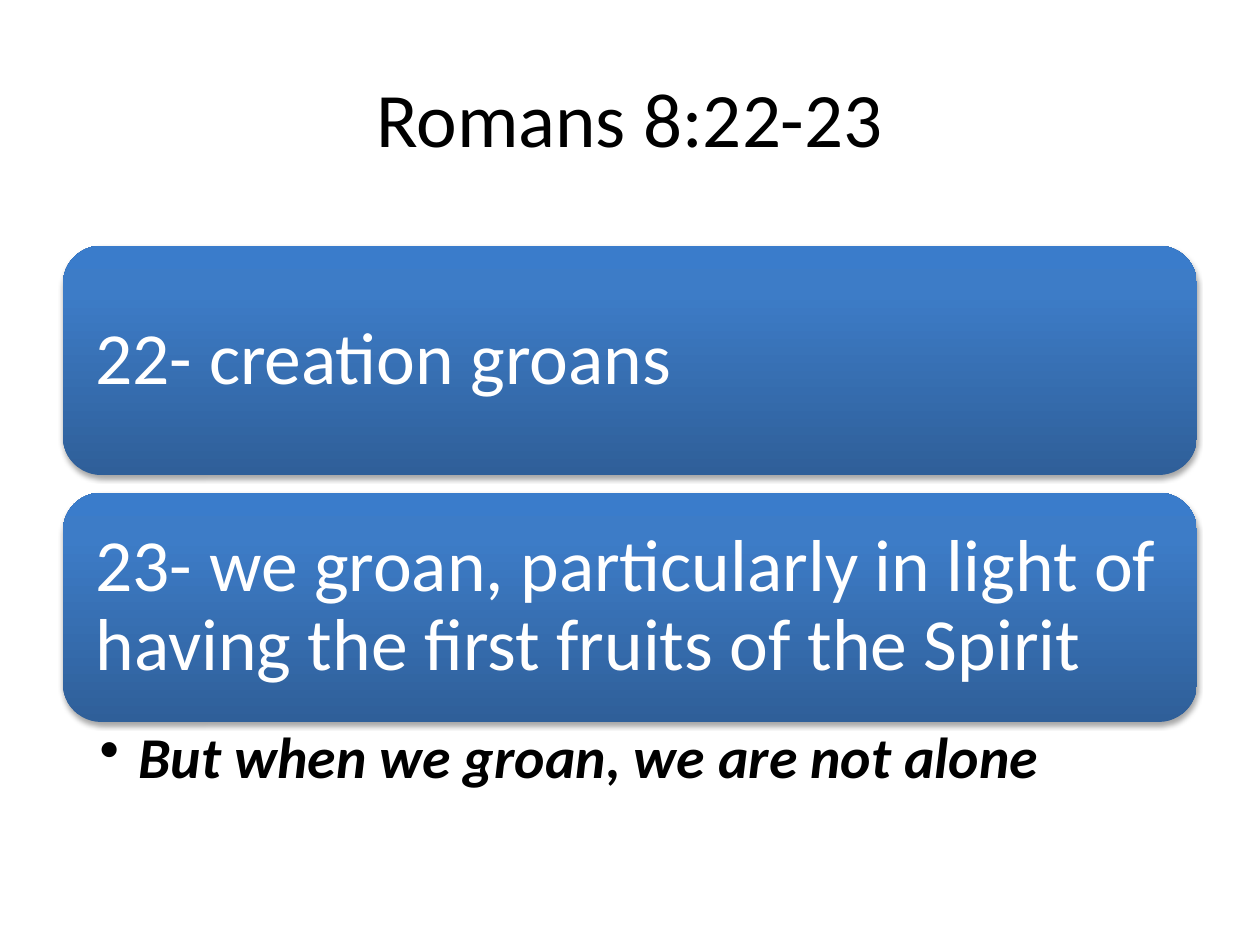
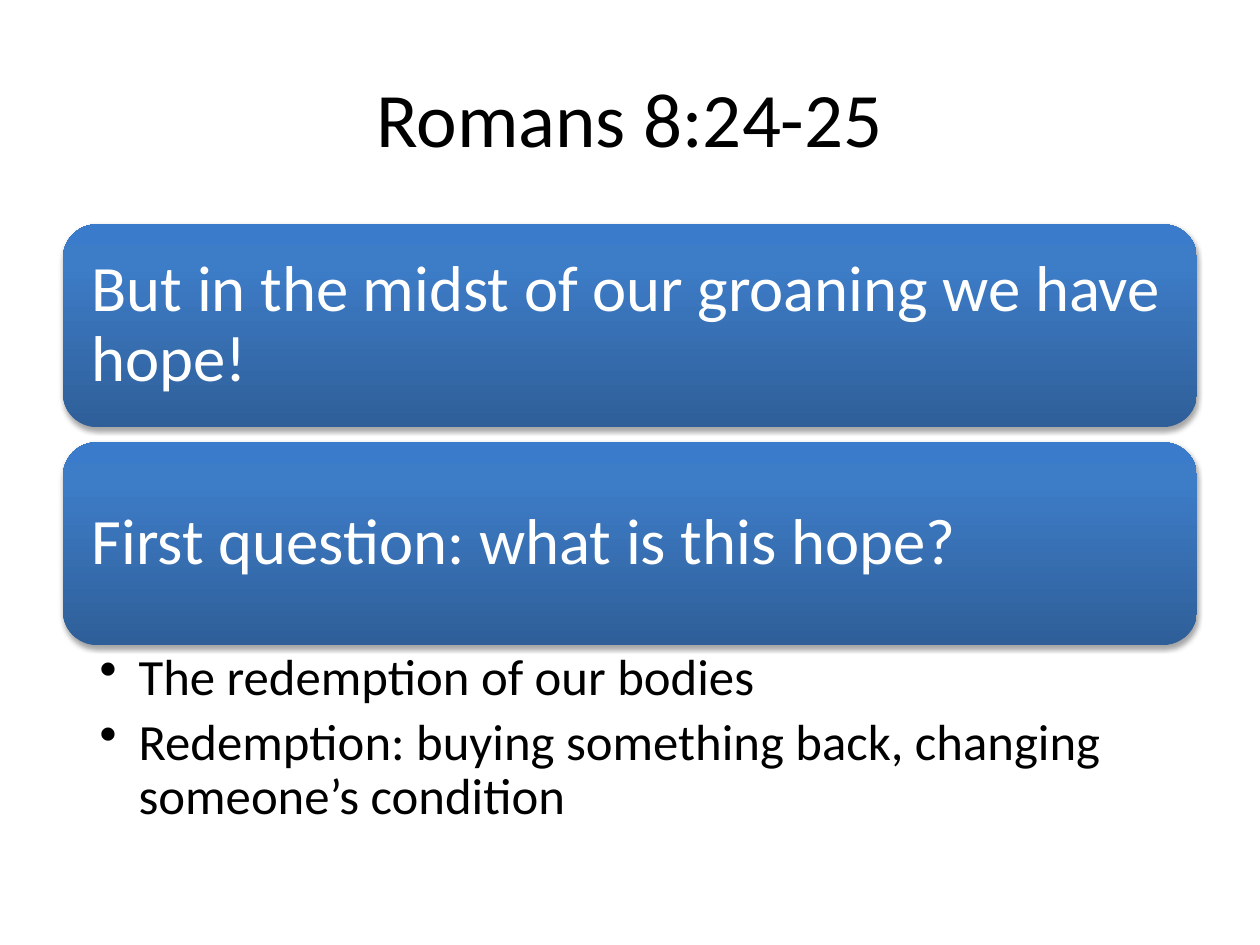
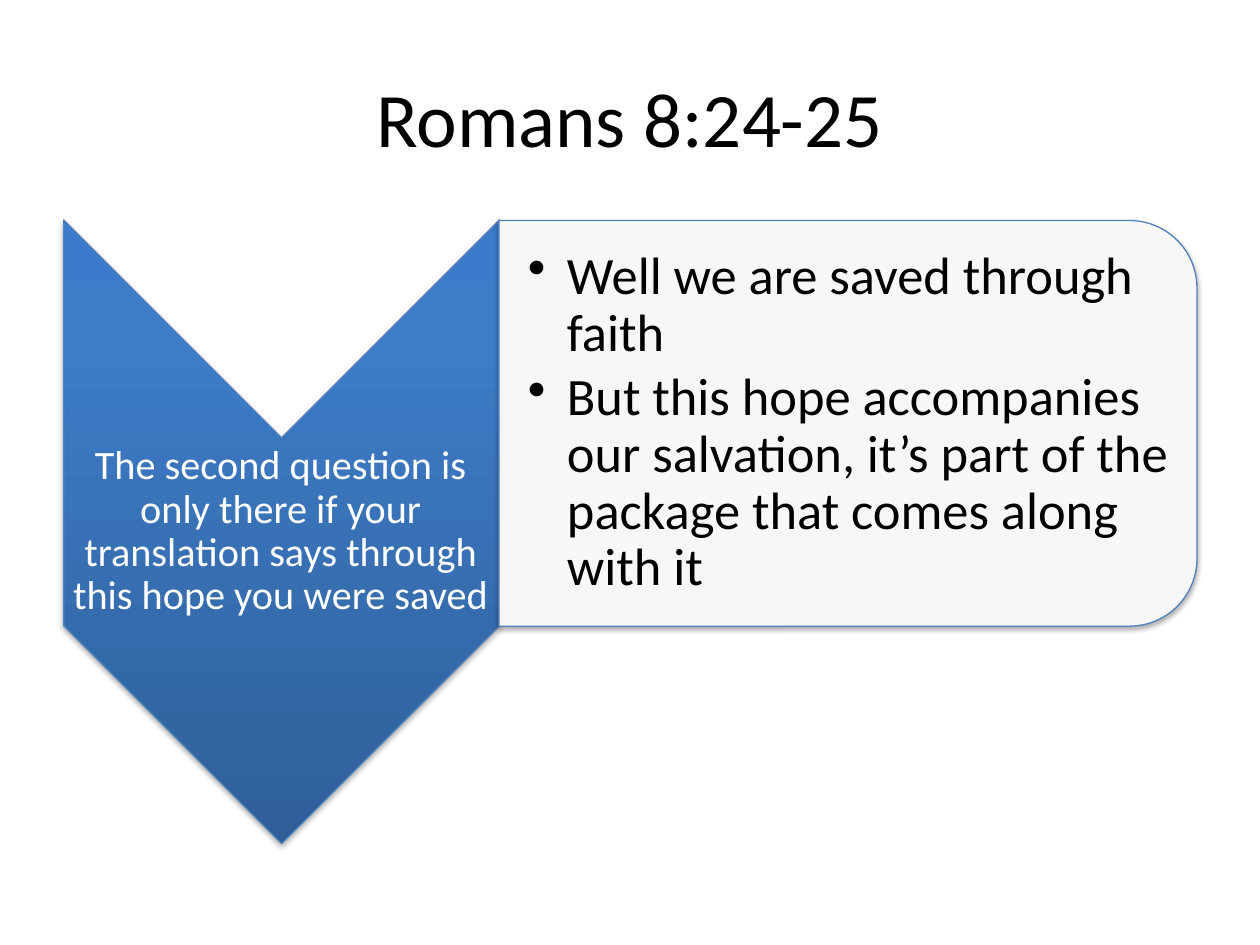
import lxml.etree
import pptx
import pptx.dml.color
import pptx.enum.shapes
import pptx.enum.text
import pptx.oxml.ns
import pptx.util

Inches, Pt = pptx.util.Inches, pptx.util.Pt
RGBColor = pptx.dml.color.RGBColor
MSO_SHAPE = pptx.enum.shapes.MSO_SHAPE
PP_ALIGN = pptx.enum.text.PP_ALIGN
MSO_ANCHOR = pptx.enum.text.MSO_ANCHOR
qn = pptx.oxml.ns.qn

BLACK = RGBColor(0x00, 0x00, 0x00)
WHITE = RGBColor(0xFF, 0xFF, 0xFF)
OUTLINE = RGBColor(0x4F, 0x81, 0xBD)
BLUE_STOPS = (
    (0, RGBColor(0x2F, 0x5F, 0x99)),
    (80, RGBColor(0x3D, 0x7C, 0xC7)),
    (100, RGBColor(0x3A, 0x7C, 0xCB)),
)
FONT = "Calibri"
LEFT, WIDTH = 0.5, 9
BULLET_INDENT = 0.31


def add_xml(parent, tag, **attributes):
    """Append a drawing element such as a:alpha and return it."""
    child = lxml.etree.SubElement(parent, qn(tag))
    for name, value in attributes.items():
        child.set(name, str(value))
    return child


class Deck:
    """The shared style, and the slide that is being filled."""

    def __init__(self):
        self.prs = pptx.Presentation()
        self.prs.slide_width, self.prs.slide_height = Inches(10), Inches(7.5)

    def start_slide(self, title):
        self.s = self.prs.slides.add_slide(self.prs.slide_layouts[6])
        self.add_text(title, box=(LEFT, 0.3, WIDTH, 1.25), size=44, align=PP_ALIGN.CENTER,
                      insets=(0.1, 0.05, 0.1, 0.05), line_spacing=1)

    def add_text(self, *texts, box, size, color=BLACK, bold=False, italic=False,
                 align=PP_ALIGN.LEFT, anchor=MSO_ANCHOR.MIDDLE, insets=(0, 0, 0, 0),
                 line_spacing=0.9, after=0, bullets=False):
        """Put one paragraph per text in a box; after is a share of the size."""
        tf = self.s.shapes.add_textbox(*map(Inches, box)).text_frame
        tf.word_wrap, tf.vertical_anchor = True, anchor
        (tf.margin_left, tf.margin_top,
         tf.margin_right, tf.margin_bottom) = map(Inches, insets)
        for i, text in enumerate(texts):
            p = tf.add_paragraph() if i else tf.paragraphs[0]
            p.alignment, p.line_spacing = align, line_spacing
            p.space_after = Pt(size * after)
            if bullets:
                self.set_bullet(p)
            r = p.add_run()
            r.text = text
            r.font.name, r.font.size = FONT, Pt(size)
            r.font.bold, r.font.italic = bold, italic
            r.font.color.rgb = color

    def set_bullet(self, p):
        p.level = 1
        pPr = p._p.get_or_add_pPr()
        pPr.set("marL", str(Inches(BULLET_INDENT)))
        pPr.set("indent", str(-Inches(BULLET_INDENT)))
        add_xml(pPr, "a:buChar", char="•")

    def shape(self, kind, box, rotation=0, outlined=False):
        sp = self.s.shapes.add_shape(kind, *map(Inches, box))
        sp.rotation = rotation
        if outlined:
            sp.line.color.rgb, sp.line.width = OUTLINE, Pt(0.75)
        else:
            sp.line.fill.background()
        self.set_shadow(sp)
        return sp

    def set_shadow(self, sp):
        sp.shadow.inherit = False
        effects = sp._element.spPr.find(qn("a:effectLst"))
        shadow = add_xml(effects, "a:outerShdw", blurRad=Pt(3.1), dist=Pt(1.8),
                         dir=5400000, rotWithShape=0)
        add_xml(add_xml(shadow, "a:srgbClr", val=BLACK), "a:alpha", val=35000)

    def fill_blue(self, sp):
        """Shade from dark at the bottom to light at the top, whatever the rotation."""
        sp.fill.gradient()
        sp.fill.gradient_angle = 90
        grad = sp._element.spPr.find(qn("a:gradFill"))
        grad.set("rotWithShape", "0")
        stops = grad.find(qn("a:gsLst"))
        for stop in list(stops):
            stops.remove(stop)
        for position, color in BLUE_STOPS:
            add_xml(add_xml(stops, "a:gs", pos=position * 1000), "a:srgbClr", val=color)

    def fill_translucent(self, sp, color, percent):
        sp.fill.solid()
        sp.fill.fore_color.rgb = color
        clr = sp._element.spPr.find(qn("a:solidFill")).find(qn("a:srgbClr"))
        add_xml(clr, "a:alpha", val=percent * 1000)

    def cards(self, texts, top, height, gap, size):
        """Stack full-width cards and return the bottom of the last one."""
        edge, inset = height * 0.05, size * 0.004
        for i, text in enumerate(texts):
            y = top + i * (height + gap)
            self.fill_blue(self.shape(MSO_SHAPE.ROUNDED_RECTANGLE, (LEFT, y, WIDTH, height)))
            self.add_text(text, box=(LEFT + edge, y + edge, WIDTH - 2 * edge, height - 2 * edge),
                          size=size, color=WHITE, insets=(inset,) * 4, after=0.35)
        return y + height

    def bullets_below(self, *texts, top, height, size, **style):
        self.add_text(*texts, box=(LEFT, top, WIDTH, height), size=size, bullets=True,
                      anchor=MSO_ANCHOR.TOP, after=0.2,
                      insets=(0.29, size / 600, size / 100, size / 600), **style)

    def chevron(self, text, box, text_box):
        self.fill_blue(self.shape(MSO_SHAPE.CHEVRON, box, rotation=90, outlined=True))
        self.add_text(text, box=text_box, size=23, color=WHITE, align=PP_ALIGN.CENTER,
                      insets=(0.02,) * 4, after=0.35)

    def panel(self, *texts, box, text_box):
        sp = self.shape(MSO_SHAPE.ROUND_2_SAME_RECTANGLE, box, rotation=90, outlined=True)
        self.fill_translucent(sp, WHITE, 90)
        self.add_text(*texts, box=text_box, size=30, bullets=True, after=0.15,
                      insets=(0.23, 0.02, 0.02, 0.02))


def main():
    deck = Deck()

    deck.start_slide("Romans 8:22-23")
    bottom = deck.cards(
        ["22- creation groans",
         "23- we groan, particularly in light of having the first fruits of the Spirit"],
        top=1.95, height=1.82, gap=0.14, size=42)
    deck.bullets_below("But when we groan, we are not alone",
                       top=bottom, height=0.76, size=33, bold=True, italic=True)

    deck.start_slide("Romans 8:24-25")
    bottom = deck.cards(
        ["But in the midst of our groaning we have hope!",
         "First question: what is this hope?"],
        top=1.78, height=1.61, gap=0.12, size=37)
    deck.bullets_below("The redemption of our bodies",
                       "Redemption: buying something back, changing someone’s condition",
                       top=bottom, height=1.55, size=29)

    deck.start_slide("Romans 8:24-25")
    deck.chevron(
        "The second question is only there if your translation says through "
        "this hope you were saved",
        box=(-0.24, 2.49, 4.95, 3.46), text_box=(LEFT, 3.48, 3.46, 1.48))
    deck.panel(
        "Well we are saved through faith",
        "But this hope accompanies our salvation, it’s part of the package "
        "that comes along with it",
        box=(5.12, 0.59, 3.22, 5.54), text_box=(3.96, 1.91, 5.38, 2.9))

    deck.prs.save("out.pptx")


if __name__ == "__main__":
    main()
